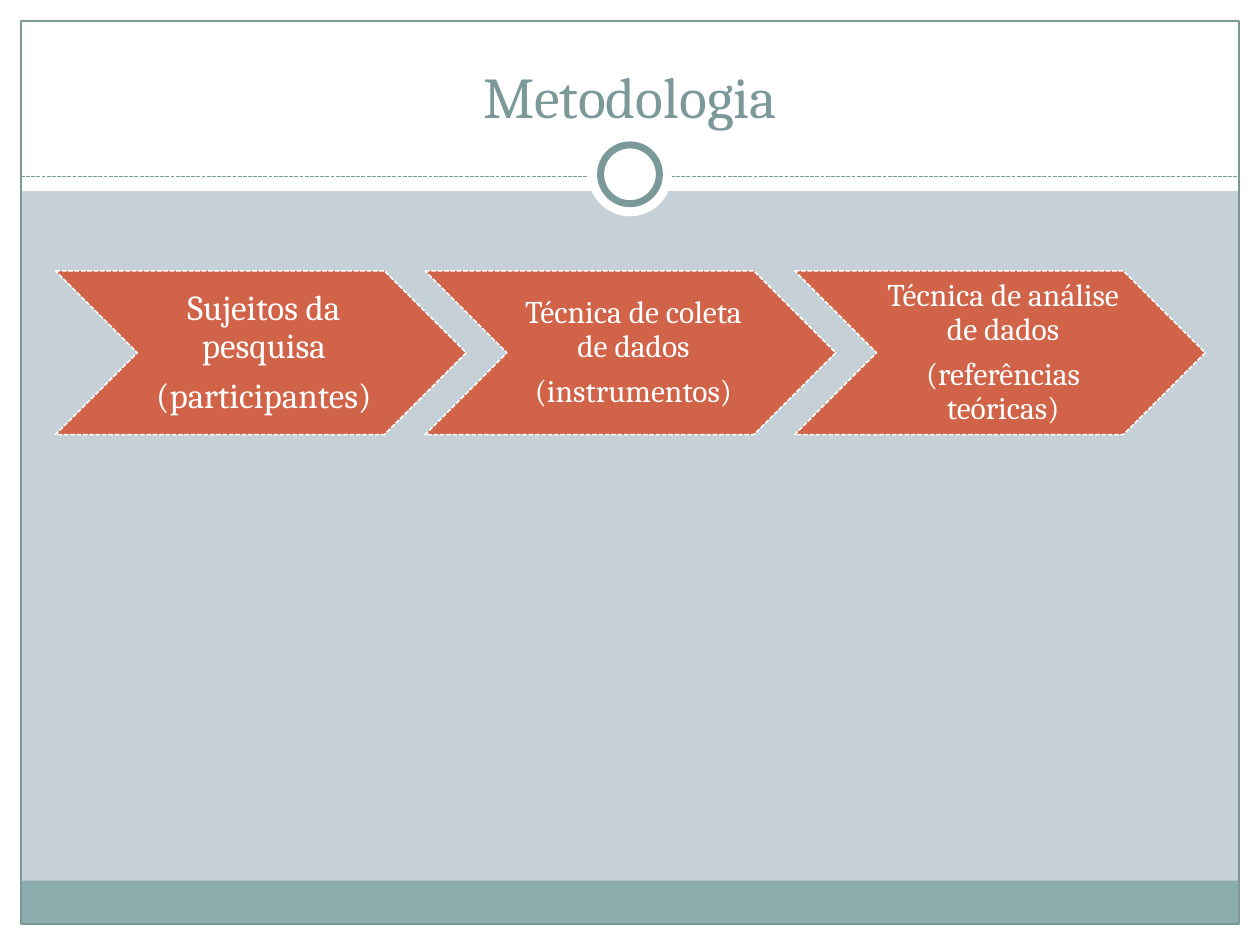
import pptx
import pptx.util
import pptx.dml.color
import pptx.enum.dml
import pptx.enum.shapes
import pptx.enum.text
import pptx.oxml.ns
import lxml.etree

COLORS = {
    "back": "C5D1D7",
    "white": "FFFFFF",
    "band": "8CADAE",
    "edge": "7C999A",
    "step": "D16349",
}
KIND = pptx.enum.shapes.MSO_SHAPE
ANCHOR = pptx.enum.text.MSO_ANCHOR
DASH = pptx.enum.dml.MSO_LINE.SQUARE_DOT
COLS, ROWS = 60, 45

STEPS = [
    (20, ["Sujeitos da pesquisa", "(participantes)"]),
    (18, ["Técnica de coleta de dados", "(instrumentos)"]),
    (18, ["Técnica de análise de dados", "(referências teóricas)"]),
]


def tint(name):
    return pptx.dml.color.RGBColor.from_string(COLORS[name])


class Deck:
    """Style and current slide; lengths are in grid columns and rows."""

    font = "Cambria"

    def __init__(self):
        self.prs = pptx.Presentation()
        self.prs.slide_width = pptx.util.Inches(10)
        self.prs.slide_height = pptx.util.Inches(7.5)
        self.slide = self.prs.slides.add_slide(self.prs.slide_layouts[6])
        fill = self.slide.background.fill
        fill.solid()
        fill.fore_color.rgb = tint("back")

    def grid(self, *cells):
        """Turn alternating columns and rows into slide lengths."""
        units = (self.prs.slide_width / COLS, self.prs.slide_height / ROWS)
        return [round(c * units[i % 2]) for i, c in enumerate(cells)]

    def stroke(self, line, color, width, dash=None):
        line.color.rgb = tint(color)
        line.width = pptx.util.Pt(width)
        if dash:
            line.dash_style = dash

    def shape(self, kind, box, fill=None, line=None):
        item = self.slide.shapes.add_shape(kind, *self.grid(*box))
        item.shadow.inherit = False
        if fill:
            item.fill.solid()
            item.fill.fore_color.rgb = tint(fill)
        else:
            item.fill.background()
        if line:
            self.stroke(item.line, *line)
        else:
            item.line.fill.background()
        return item

    def rule(self, ends, line):
        kind = pptx.enum.shapes.MSO_CONNECTOR.STRAIGHT
        item = self.slide.shapes.add_connector(kind, *self.grid(*ends))
        self.stroke(item.line, *line)
        props = item._element.spPr
        lxml.etree.SubElement(props, pptx.oxml.ns.qn("a:effectLst"))

    def text(self, frame, texts, size, color, anchor):
        frame.word_wrap = True
        frame.vertical_anchor = anchor
        for i, text in enumerate(texts):
            para = frame.add_paragraph() if i else frame.paragraphs[0]
            para.text = text
            para.alignment = pptx.enum.text.PP_ALIGN.CENTER
            para.font.name = self.font
            para.font.size = pptx.util.Pt(size)
            para.font.color.rgb = tint(color)

    def title(self, box, text):
        item = self.slide.shapes.add_textbox(*self.grid(*box))
        self.text(item.text_frame, [text], 33, "edge", ANCHOR.BOTTOM)

    def step(self, box, texts, size):
        item = self.shape(KIND.CHEVRON, box, "step", ("white", 0.9, DASH))
        frame = item.text_frame
        self.text(frame, texts, size, "white", ANCHOR.MIDDLE)
        frame.margin_left = pptx.util.Inches(0.08)
        thin = pptx.util.Inches(0.03)
        frame.margin_top = frame.margin_right = frame.margin_bottom = thin
        for para in frame.paragraphs:
            para.line_spacing = 0.9
            para.space_after = pptx.util.Pt(size * 0.35)


def main():
    deck = Deck()
    margins = [
        (0, ROWS - 1, COLS, 1),
        (0, 0, COLS, 9.1),
        (0, 0, 1, ROWS),
        (COLS - 1, 0, 1, ROWS),
    ]
    for box in margins:
        deck.shape(KIND.RECTANGLE, box, "white")
    deck.shape(KIND.RECTANGLE, (1, 41.94, COLS - 2, 2.06), "band")
    deck.shape(KIND.RECTANGLE, (1, 1, COLS - 2, ROWS - 2), line=("edge", 0.75))
    deck.rule((1, 8.4, COLS - 1, 8.4), ("edge", 0.75, DASH))
    deck.shape(KIND.OVAL, (28, 6.3, 4, 4), "white")
    deck.shape(KIND.OVAL, (28.6, 6.9, 2.8, 2.8), "white", ("edge", 4))
    deck.title((2, 1.5, COLS - 4, 5), "Metodologia")
    for i, (size, texts) in enumerate(STEPS):
        deck.step((2.64 + 17.6 * i, 12.9, 19.56, 7.8), texts, size)
    deck.prs.save("out.pptx")


if __name__ == "__main__":
    main()
